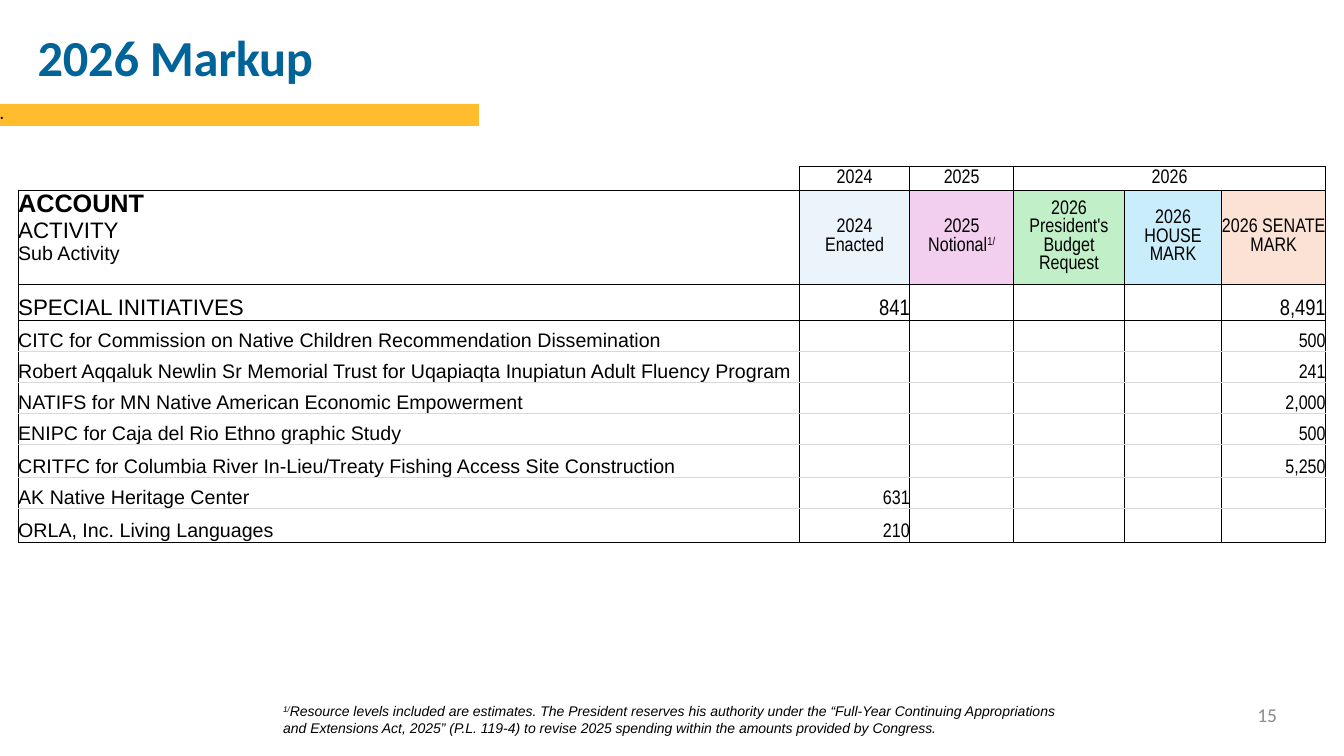
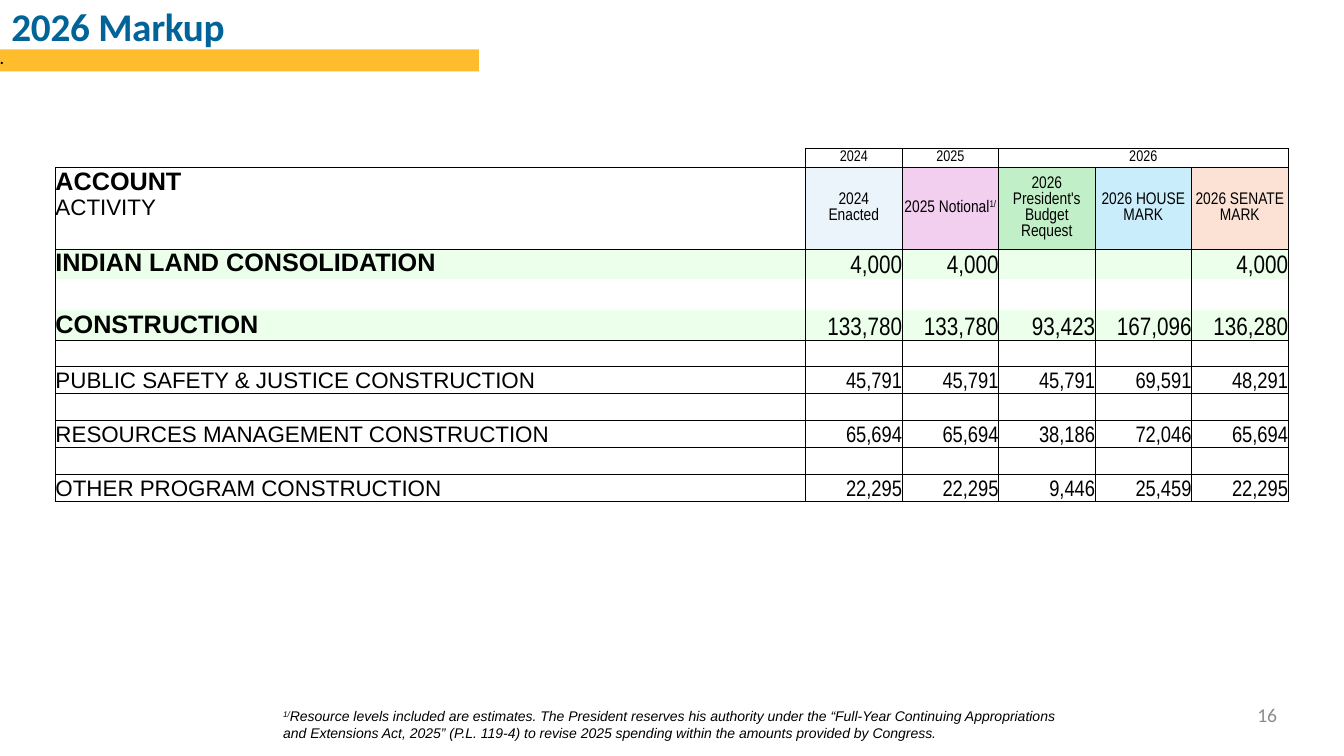
from dataclasses import dataclass

from lxml.etree import SubElement
from pptx import Presentation
from pptx.dml.color import RGBColor
from pptx.enum.shapes import MSO_SHAPE
from pptx.enum.text import MSO_ANCHOR, MSO_AUTO_SIZE, PP_ALIGN
from pptx.oxml.ns import qn
from pptx.util import Inches, Pt

# Colours
BLACK = RGBColor(0x00, 0x00, 0x00)
BLUE = RGBColor(0x00, 0x64, 0x99)
GOLD = RGBColor(0xFF, 0xBD, 0x2D)
GREY = RGBColor(0x8C, 0x8C, 0x8C)
PALE = RGBColor(0xD9, 0xD9, 0xD9)
MINT = RGBColor(0xEB, 0xFF, 0xEB)
HEADS = [None, RGBColor(0xEB, 0xF3, 0xFB), RGBColor(0xF2, 0xCE, 0xEF),
         RGBColor(0xC1, 0xF0, 0xC8), RGBColor(0xCA, 0xED, 0xFB),
         RGBColor(0xFB, 0xE2, 0xD5)]

# Fonts
SANS, SLIM, BODY = "Arial", "Arial Narrow", "Calibri"
LEFT, MID, RIGHT = PP_ALIGN.LEFT, PP_ALIGN.CENTER, PP_ALIGN.RIGHT
TOP, LOW = MSO_ANCHOR.TOP, MSO_ANCHOR.BOTTOM

# Text between carets is raised
NOTE = ("^1/^Resource levels included are estimates. The President reserves "
        "his authority under the “Full-Year Continuing Appropriations and "
        "Extensions Act, 2025” (P.L. 119-4) to revise 2025 spending within "
        "the amounts provided by Congress.")
YEARS = ["", "2024", "2025", "2026", "", ""]


@dataclass
class Row:
    """One table row: height as a share of the slide, text and look."""
    high: float
    cells: list
    size: int = 14
    below: RGBColor = BLACK
    tint: RGBColor = None
    bold: bool = False


def empty(high, below=BLACK):
    return Row(high, [""] * 6, 10, below)


def heads(house):
    return ["", "2024\nEnacted", "2025 Notional^1/",
            "2026\nPresident's\nBudget\nRequest", house, "2026 SENATE MARK"]


class Deck:
    """Holds the shared style and the current slide; lengths are percent."""

    def __init__(self):
        self.prs = Presentation()
        self.prs.slide_width = Inches(13.33)
        self.prs.slide_height = Inches(7.5)
        self.slide = None

    def wide(self, share):
        return round(self.prs.slide_width * share / 100)

    def high(self, share):
        return round(self.prs.slide_height * share / 100)

    def area(self, x, y, w, h):
        return self.wide(x), self.high(y), self.wide(w), self.high(h)

    def bare(self, frame):
        frame.margin_left = frame.margin_right = 0
        frame.margin_top = frame.margin_bottom = 0

    def label(self, frame, text, size, face=SANS, color=BLACK, bold=False,
              slant=False, align=LEFT):
        """Fill a frame; size may be a list with one size per line."""
        frame.word_wrap = True
        for i, line in enumerate(text.split("\n")):
            par = frame.paragraphs[0] if i == 0 else frame.add_paragraph()
            par.alignment = align
            font = par.font
            font.size = Pt(size[i] if isinstance(size, list) else size)
            font.name, font.italic = face, slant
            font.bold = bold and i == 0
            font.color.rgb = color
            for k, part in enumerate(line.split("^")):
                if part:
                    run = par.add_run()
                    run.text = part
                    if k % 2:
                        run.font._element.set("baseline", "30000")
            if not line:
                SubElement(par._p, qn("a:endParaRPr"), sz=str(size * 100))

    def title(self, text, x, y, size):
        layout = self.prs.slide_layouts[5]
        self.slide = self.prs.slides.add_slide(layout)
        shape = self.slide.shapes.title
        shape.left, shape.top, shape.width, shape.height = self.area(
            x, y, 67.44, size / 4.4)
        frame = shape.text_frame
        self.bare(frame)
        frame.margin_top = Inches(0.02)
        frame.auto_size = MSO_AUTO_SIZE.NONE
        frame.vertical_anchor = TOP
        self.label(frame, text, size, BODY, BLUE, True)
        par = frame.paragraphs[0]
        par.space_before = Pt(0)
        par.runs[0].font._element.set("spc", "-20")

    def band(self, y):
        shape = self.slide.shapes.add_shape(
            MSO_SHAPE.RECTANGLE, *self.area(0, y, 35.63, 2.93))
        shape.shadow.inherit = False
        shape.fill.solid()
        shape.fill.fore_color.rgb = GOLD
        shape.line.fill.background()
        self.bare(shape.text_frame)
        shape.text_frame.vertical_anchor = TOP
        self.label(shape.text_frame, ".", 11, BODY, bold=True)

    def foot(self, page, y):
        box = self.slide.shapes.add_textbox(*self.area(72, 92.93, 23.03, 3.2))
        self.bare(box.text_frame)
        self.label(box.text_frame, page, 14, BODY, GREY, align=RIGHT)
        box = self.slide.shapes.add_textbox(*self.area(20.33, y, 59.34, 5.87))
        self.label(box.text_frame, NOTE, 10, slant=True)

    def edges(self, cell, **sides):
        """Draw the four cell borders; None hides a side."""
        props = cell._tc.get_or_add_tcPr()
        for side in "LRTB":
            line = SubElement(props, qn("a:ln" + side), w=str(Pt(0.5)))
            if sides[side] is None:
                SubElement(line, qn("a:noFill"))
            else:
                fill = SubElement(line, qn("a:solidFill"))
                SubElement(fill, qn("a:srgbClr"), val=str(sides[side]))

    def cell(self, cell, text, size, tint, anchor, **style):
        self.bare(cell)
        cell.vertical_anchor = anchor
        if tint is None:
            cell.fill.background()
        else:
            cell.fill.solid()
            cell.fill.fore_color.rgb = tint
        self.label(cell.text_frame, text, size, **style)

    def table(self, x, y, cols, rows, corner, sizes):
        """Rows 0 and 1 are heads; corner holds the top left label."""
        tall = sum(row.high for row in rows)
        grid = self.slide.shapes.add_table(
            len(rows), len(cols), *self.area(x, y, sum(cols), tall)).table
        grid.first_row = grid.horz_banding = False
        for col, share in zip(grid.columns, cols):
            col.width = self.wide(share)
        over = BLACK
        for r, row in enumerate(rows):
            grid.rows[r].height = self.high(row.high)
            for c, text in enumerate(row.cells):
                cell = grid.cell(r, c)
                blank = r == c == 0
                self.edges(cell, L=None if blank else BLACK, R=BLACK,
                           T=None if blank else over, B=row.below)
                if r == 1 and c == 0:
                    self.cell(cell, corner, sizes, None, TOP, bold=True)
                elif r < 2:
                    self.cell(cell, text, row.size, HEADS[c] if r else None,
                              MSO_ANCHOR.MIDDLE, face=SLIM, align=MID)
                elif c == 0:
                    self.cell(cell, text, row.size, row.tint,
                              TOP if row.bold else LOW, bold=row.bold)
                else:
                    self.cell(cell, text, row.size if text else 10, row.tint,
                              LOW, face=SLIM, align=RIGHT)
            over = row.below
        grid.cell(0, 3).merge(grid.cell(0, 5))


def main():
    deck = Deck()

    # Special initiatives
    deck.title("2026 Markup", 2.8, 3.2, 36)
    deck.band(13.73)
    deck.foot("15", 92.27)
    items = [
        (4.13, "CITC for Commission on Native Children Recommendation "
               "Dissemination", "", "500"),
        (4.13, "Robert Aqqaluk Newlin Sr Memorial Trust for Uqapiaqta "
               "Inupiatun Adult Fluency Program", "", "241"),
        (4.13, "NATIFS for MN Native American Economic Empowerment",
         "", "2,000"),
        (4.13, "ENIPC for Caja del Rio Ethno graphic Study", "", "500"),
        (4.37, "CRITFC for Columbia River In-Lieu/Treaty Fishing Access "
               "Site Construction", "", "5,250"),
        (4.1, "AK Native Heritage Center", "631", ""),
        (4.37, "ORLA, Inc. Living Languages", "210", ""),
    ]
    rows = [Row(3.11, YEARS), Row(12.43, heads("2026\nHOUSE MARK")),
            Row(4.76, ["SPECIAL INITIATIVES", "841", "", "", "", "8,491"], 16)]
    rows += [Row(high, [name, past, "", "", "", mark], below=PALE)
             for high, name, past, mark in items]
    rows[-1].below = BLACK
    deck.table(1.35, 22, [58.14, 8.2, 7.73, 8.25, 7.24, 7.73], rows,
               "ACCOUNT\nACTIVITY\nSub Activity", [18, 16, 14])

    # Construction
    deck.title("2026 Markup", 0.85, 0, 28)
    deck.band(6.53)
    deck.foot("16", 92.93)
    rows = [
        Row(2.51, YEARS, 11),
        Row(10.78, heads("2026 HOUSE MARK"), 12),
        Row(3.9, ["INDIAN LAND CONSOLIDATION", "4,000", "4,000", "", "",
                  "4,000"], 18, None, MINT, True),
        empty(4.1, None),
        Row(4.03, ["CONSTRUCTION", "133,780", "133,780", "93,423", "167,096",
                   "136,280"], 18, BLACK, MINT, True),
        empty(3.44),
        Row(3.57, ["PUBLIC SAFETY & JUSTICE CONSTRUCTION", "45,791", "45,791",
                   "45,791", "69,591", "48,291"], 16),
        empty(3.57),
        Row(3.57, ["RESOURCES MANAGEMENT CONSTRUCTION", "65,694", "65,694",
                   "38,186", "72,046", "65,694"], 16),
        empty(3.57),
        Row(3.57, ["OTHER PROGRAM CONSTRUCTION", "22,295", "22,295", "9,446",
                   "25,459", "22,295"], 16),
    ]
    deck.table(4.13, 19.64, [55.81] + [7.18] * 5, rows,
               "ACCOUNT\nACTIVITY", [18, 16])

    deck.prs.save("out.pptx")


if __name__ == "__main__":
    main()
